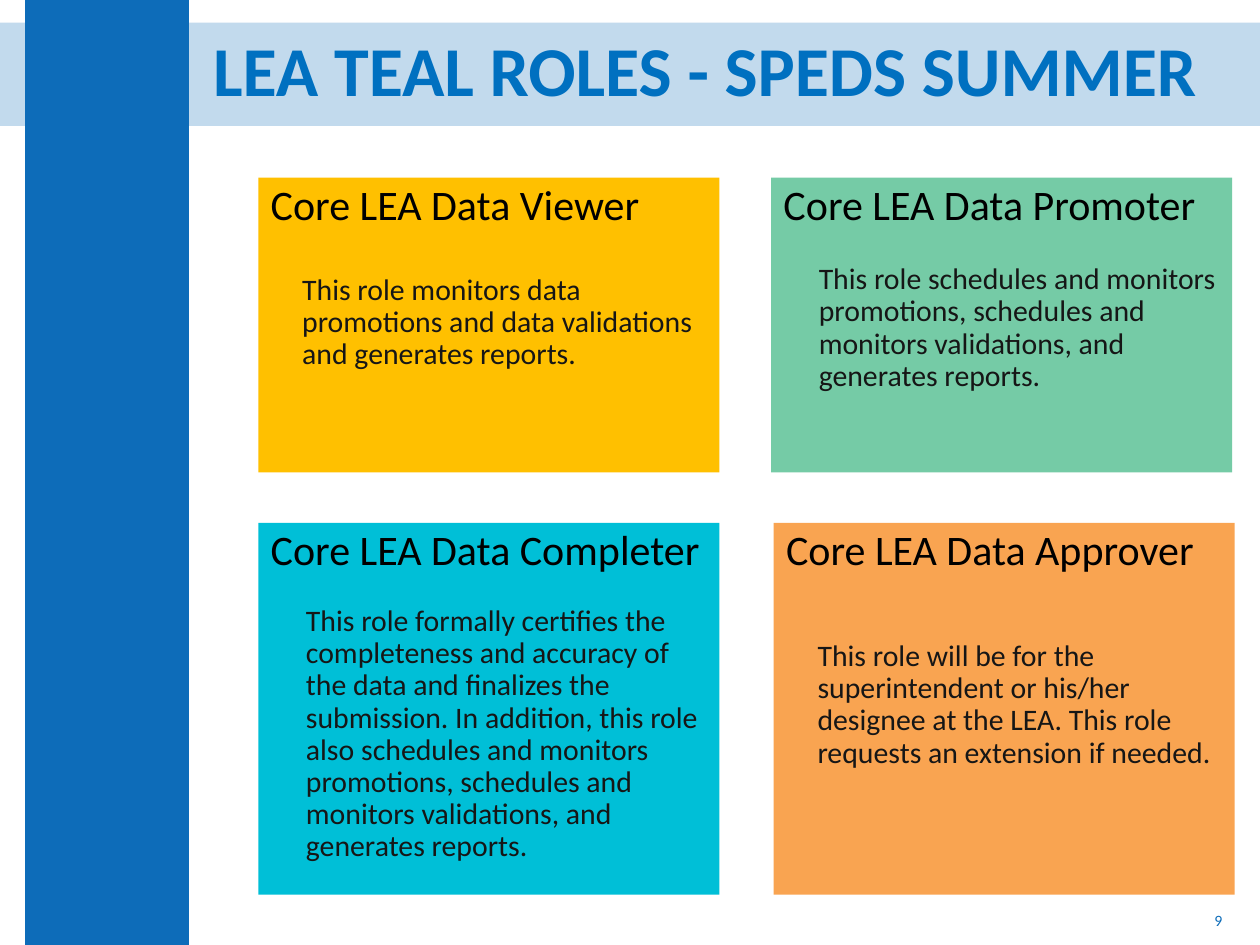
from dataclasses import dataclass

from lxml.etree import SubElement
from pptx import Presentation
from pptx.dml.color import RGBColor
from pptx.enum.shapes import MSO_SHAPE
from pptx.enum.text import MSO_ANCHOR, PP_ALIGN
from pptx.oxml.ns import qn
from pptx.shapes.autoshape import Shape
from pptx.slide import Slide
from pptx.text.text import TextFrame
from pptx.util import Inches, Pt


@dataclass(frozen=True)
class Theme:
    font: str = "Calibri"
    blue: str = "0D6CB9"
    title: str = "0070C0"
    black: str = "000000"
    ink: str = "161616"
    gold: str = "FFC000"
    green: str = "75CBA6"
    teal: str = "00BFD7"
    orange: str = "F9A451"
    big: int = 40
    head: int = 24
    body: int = 17
    small: int = 9


@dataclass(frozen=True)
class Box:
    left: float
    top: float
    width: float
    height: float

    def place(self) -> list[int]:
        return [Inches(n) for n in (self.left, self.top, self.width, self.height)]


@dataclass(frozen=True)
class Card:
    left: float
    row: int
    color: str
    name: str
    text: str
    indent: float
    gap: float


THEME = Theme()
WIDTH = 3.66
ROWS = ((1.41, 2.34), (4.15, 2.95))
CARDS = (
    Card(2.05, 0, THEME.gold, "Core LEA Data Viewer",
         "This role monitors data promotions and data validations and "
         "generates reports.", 0.25, 26),
    Card(6.12, 0, THEME.green, "Core LEA Data Promoter",
         "This role schedules and monitors promotions, schedules and "
         "monitors validations, and generates reports.", 0.28, 20),
    Card(2.05, 1, THEME.teal, "Core LEA Data Completer",
         "This role formally certifies the completeness and accuracy of the "
         "data and finalizes the submission. In addition, this role also "
         "schedules and monitors promotions, schedules and monitors "
         "validations, and generates reports.", 0.28, 18),
    Card(6.14, 1, THEME.orange, "Core LEA Data Approver",
         "This role will be for the superintendent or his/her designee at "
         "the LEA. This role requests an extension if needed.", 0.25, 38),
)


def write(frame: TextFrame, text: str, *, size: float, color: str,
          bold: bool = False, align: PP_ALIGN = PP_ALIGN.LEFT,
          line: float = 0.9, before: float = 0, indent: float = 0) -> None:
    para = frame.paragraphs[0]
    if para.text:
        para = frame.add_paragraph()
    para.alignment = align
    para.line_spacing = line
    if before:
        para.space_before = Pt(before)
    if indent:
        para._p.get_or_add_pPr().set("marL", str(Inches(indent)))
    run = para.add_run()
    run.text = text
    run.font.name = THEME.font
    run.font.size = Pt(size)
    run.font.bold = bold
    run.font.color.rgb = RGBColor.from_string(color)


def block(slide: Slide, box: Box, color: str, alpha: int = 100) -> Shape:
    shape = slide.shapes.add_shape(MSO_SHAPE.RECTANGLE, *box.place())
    shape.shadow.inherit = False
    shape.fill.solid()
    shape.fill.fore_color.rgb = RGBColor.from_string(color)
    shape.line.fill.background()
    if alpha < 100:
        tint = shape._element.spPr.find(".//" + qn("a:srgbClr"))
        SubElement(tint, qn("a:alpha")).set("val", str(alpha * 1000))
    return shape


def label(slide: Slide, box: Box) -> TextFrame:
    frame = slide.shapes.add_textbox(*box.place()).text_frame
    frame.word_wrap = True
    frame.vertical_anchor = MSO_ANCHOR.MIDDLE
    return frame


def draw(slide: Slide, card: Card) -> None:
    top, height = ROWS[card.row]
    shape = block(slide, Box(card.left, top, WIDTH, height), card.color)
    frame = shape.text_frame
    frame.word_wrap = True
    frame.vertical_anchor = MSO_ANCHOR.TOP
    write(frame, card.name, size=THEME.head, color=THEME.black)
    write(frame, card.text, size=THEME.body, color=THEME.ink,
          before=card.gap, indent=card.indent)


def main() -> None:
    deck = Presentation()
    deck.slide_width, deck.slide_height = Inches(10), Inches(7.5)
    slide = deck.slides.add_slide(deck.slide_layouts[6])

    block(slide, Box(0, 0.18, 10, 0.82), THEME.blue, alpha=25)
    block(slide, Box(0.2, 0, 1.3, 7.5), THEME.blue)

    title = label(slide, Box(1.51, 0.27, 8.29, 0.63))
    title.margin_right = Inches(0.22)
    write(title, "LEA TEAL ROLES - SPEDS SUMMER", size=THEME.big,
          color=THEME.title, bold=True, align=PP_ALIGN.CENTER)

    for card in CARDS:
        draw(slide, card)

    page = label(slide, Box(7.55, 7.1, 2.25, 0.4))
    write(page, "9", size=THEME.small, color=THEME.blue,
          align=PP_ALIGN.RIGHT, line=1.0)

    deck.save("out.pptx")


if __name__ == "__main__":
    main()
